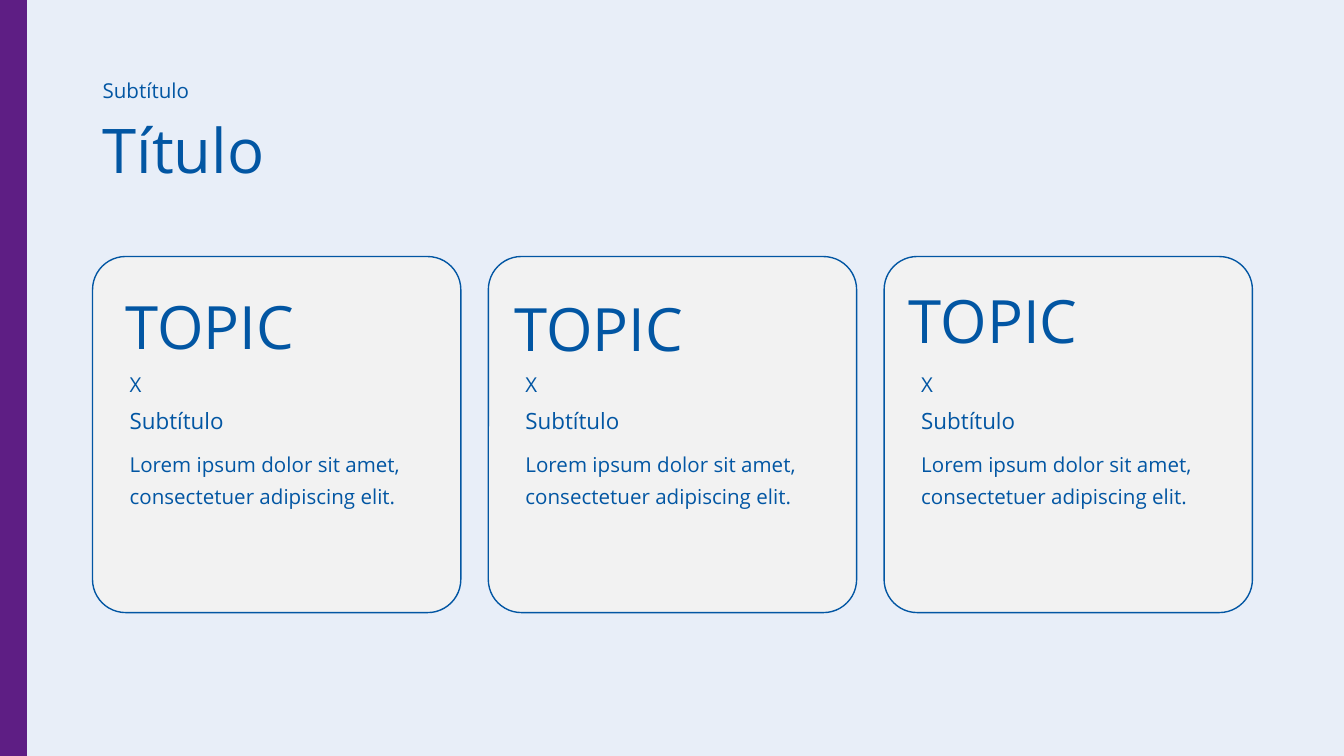
from pptx import Presentation
from pptx.dml.color import RGBColor
from pptx.enum.shapes import MSO_SHAPE as SHAPE
from pptx.enum.text import MSO_AUTO_SIZE as AUTO_SIZE
from pptx.util import Cm, Pt

BLUE = RGBColor(0x02, 0x56, 0xA3)
PALE_BLUE = RGBColor(0xE8, 0xEE, 0xF8)
LIGHT_GRAY = RGBColor(0xF2, 0xF2, 0xF2)
PURPLE = RGBColor(0x5E, 0x1E, 0x84)
FONT = "Open Sans"
SLIDE_W, SLIDE_H = 25.4, 14.29
CARD_X, CARD_Y, CARD_W, CARD_H, CARD_PITCH = 1.75, 4.85, 6.96, 6.73, 7.48
TOPIC_OFFSETS = [(0.43, 0.53), (0.3, 0.56), (0.28, 0.41)]


def add_box(shapes, kind, x, y, w, h, fill, line=None):
    """Add a filled shape, outlined only when a line colour is given."""
    sp = shapes.add_shape(kind, Cm(x), Cm(y), Cm(w), Cm(h))
    sp.shadow.inherit = False
    sp.fill.solid()
    sp.fill.fore_color.rgb = fill
    if line is None:
        sp.line.fill.background()
    else:
        sp.line.color.rgb = line
        sp.line.width = Pt(0.75)
    return sp


def add_text(shapes, text, x, y, w, h, size, spacing=None):
    """Add a wrapped text box holding one blue paragraph."""
    tf = shapes.add_textbox(Cm(x), Cm(y), Cm(w), Cm(h)).text_frame
    tf.word_wrap = True
    tf.auto_size = AUTO_SIZE.SHAPE_TO_FIT_TEXT
    tf.margin_left = tf.margin_right = Cm(0.19)
    tf.margin_top = tf.margin_bottom = Cm(0.1)
    p = tf.paragraphs[0]
    if spacing:
        p.line_spacing = spacing
    r = p.add_run()
    r.text = text
    r.font.name = FONT
    r.font.size = Pt(size)
    r.font.color.rgb = BLUE


def add_header(s, x, y, w):
    """Place the subtitle with the title below it."""
    add_text(s.shapes, "Título", x, y + 0.64, w, 1.6, 33)
    add_text(s.shapes, "Subtítulo", x, y, 4.7, 0.66, 11)


def add_card(s, x, y, w, h):
    """Place a grouped card with its marker, subtitle and body text."""
    shapes = s.shapes.add_group_shape().shapes
    sp = add_box(shapes, SHAPE.ROUNDED_RECTANGLE, x, y, w, h, LIGHT_GRAY, BLUE)
    sp.adjustments[0] = 0.093
    left = x + 0.51
    add_text(shapes, "X", left, y + 2.08, 2.31, 0.66, 11)
    add_text(shapes, "Subtítulo", left, y + 2.74, 4.85, 0.71, 12)
    add_text(shapes, "Lorem ipsum dolor sit amet, consectetuer adipiscing elit.",
             left, y + 3.45, 5.92, 1.27, 11, spacing=1.3)


def main():
    """Build the slide and save it."""
    prs = Presentation()
    prs.slide_width, prs.slide_height = Cm(SLIDE_W), Cm(SLIDE_H)
    s = prs.slides.add_slide(prs.slide_layouts[6])
    add_box(s.shapes, SHAPE.RECTANGLE, 0, 0, SLIDE_W, SLIDE_H, PALE_BLUE)
    add_header(s, 1.75, 1.37, 18.75)
    card_lefts = [CARD_X + i * CARD_PITCH for i in range(len(TOPIC_OFFSETS))]
    for x in card_lefts:
        add_card(s, x, CARD_Y, CARD_W, CARD_H)
    add_box(s.shapes, SHAPE.RECTANGLE, 0, 0, 0.51, SLIDE_H, PURPLE)
    for x, (dx, dy) in zip(card_lefts, TOPIC_OFFSETS):
        add_text(s.shapes, "TOPIC", x + dx, CARD_Y + dy, 5.31, 1.55, 32)
    prs.save("out.pptx")


if __name__ == "__main__":
    main()
